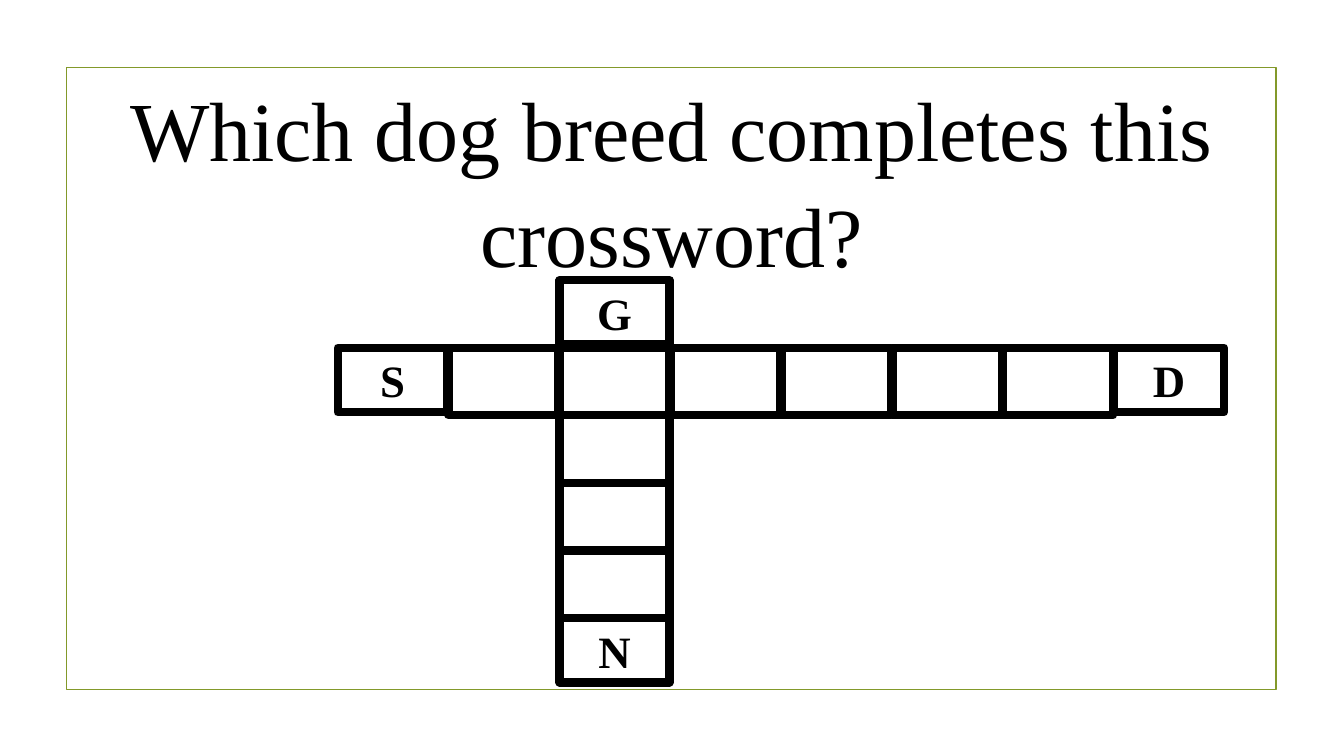
from dataclasses import dataclass

from pptx import Presentation
from pptx.dml.color import RGBColor
from pptx.enum.shapes import MSO_SHAPE
from pptx.enum.text import MSO_ANCHOR, PP_ALIGN
from pptx.util import Pt

EMU_PER_PX = 9144


@dataclass(frozen=True)
class Theme:
    """Colours, font and sizes of the slide."""
    ink: RGBColor = RGBColor(0x00, 0x00, 0x00)
    border: RGBColor = RGBColor(0x83, 0x99, 0x2A)
    font: str = "Times New Roman"
    question_size: int = 60
    letter_size: int = 32
    border_width: float = 1.25
    cell_width: int = 6


THEME = Theme()


def px(*lengths):
    """Turn px lengths into EMU."""
    return [length * EMU_PER_PX for length in lengths]


def write(frame, words, size, bold=False):
    """Write one centred paragraph in the theme font."""
    frame.word_wrap = True
    frame.text = words
    paragraph = frame.paragraphs[0]
    paragraph.alignment = PP_ALIGN.CENTER
    font = paragraph.runs[0].font
    font.name, font.size, font.bold = THEME.font, Pt(size), bold
    font.color.rgb = THEME.ink


def add_outline(slide, box, color, width):
    """Add an unfilled rectangle with a coloured line."""
    outline = slide.shapes.add_shape(MSO_SHAPE.RECTANGLE, *px(*box))
    outline.shadow.inherit = False
    outline.fill.background()
    outline.line.color.rgb = color
    outline.line.width = Pt(width)
    return outline


def add_question(slide, box, words):
    """Add the question at the top of the frame."""
    question = slide.shapes.add_textbox(*px(*box)).text_frame
    write(question, words, THEME.question_size)
    question.vertical_anchor = MSO_ANCHOR.TOP
    question.paragraphs[0].line_spacing = 1.05


def add_crossword(slide, box, across, down, crossing):
    """Draw two crossing words, with a dot for each open cell."""
    left, top, width, height = box
    column_step, row_step = width // len(across), height // len(down)
    crossing_column, crossing_row = crossing
    cells = {(crossing_column, row): letter for row, letter in enumerate(down)}
    cells.update({(column, crossing_row): letter for column, letter in enumerate(across)})
    for (column, row), letter in cells.items():
        is_open = letter == "."
        cell_box = (left + column * column_step, top + row * row_step,
                    column_step - 1, row_step if is_open else row_step - 3)
        cell = add_outline(slide, cell_box, THEME.ink, THEME.cell_width)
        if not is_open:
            write(cell.text_frame, letter, THEME.letter_size, bold=True)
            cell.text_frame.vertical_anchor = MSO_ANCHOR.MIDDLE


def add_puzzle_slide(deck, box):
    """Add a framed slide with a question above a crossword."""
    slide = deck.slides.add_slide(deck.slide_layouts[6])
    left, top, width, height = box
    add_outline(slide, box, THEME.border, THEME.border_width)
    add_question(slide, (left, top, width, 212), "Which dog breed completes this crossword?")
    add_crossword(slide, (left + 269, top + 211, 880, 402), "S......D", "G....N", (2, 1))


def main():
    """Build and save the deck."""
    deck = Presentation()
    deck.slide_width, deck.slide_height = px(1333, 750)
    add_puzzle_slide(deck, (66, 67, 1200, 617))
    deck.save("out.pptx")


if __name__ == "__main__":
    main()
